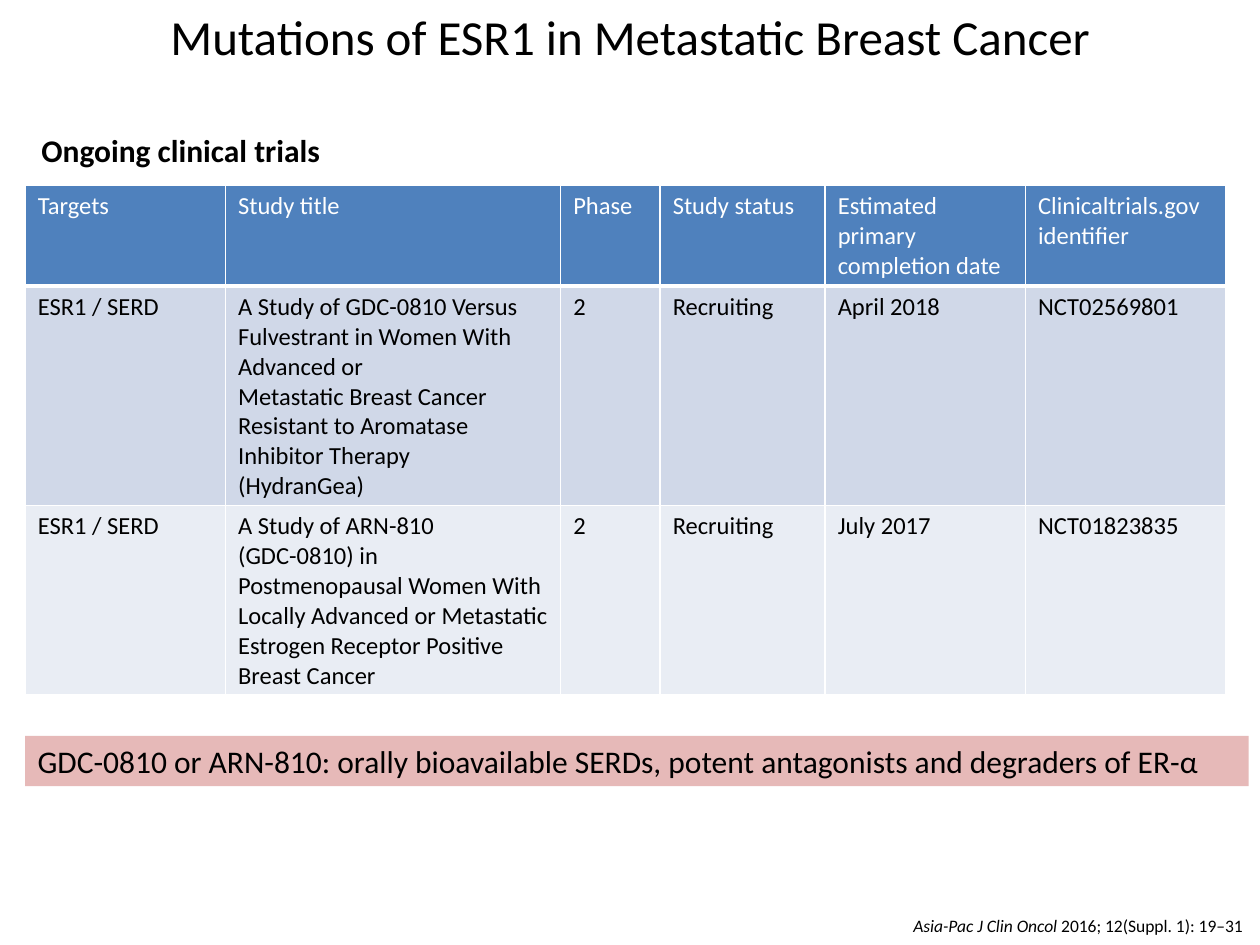
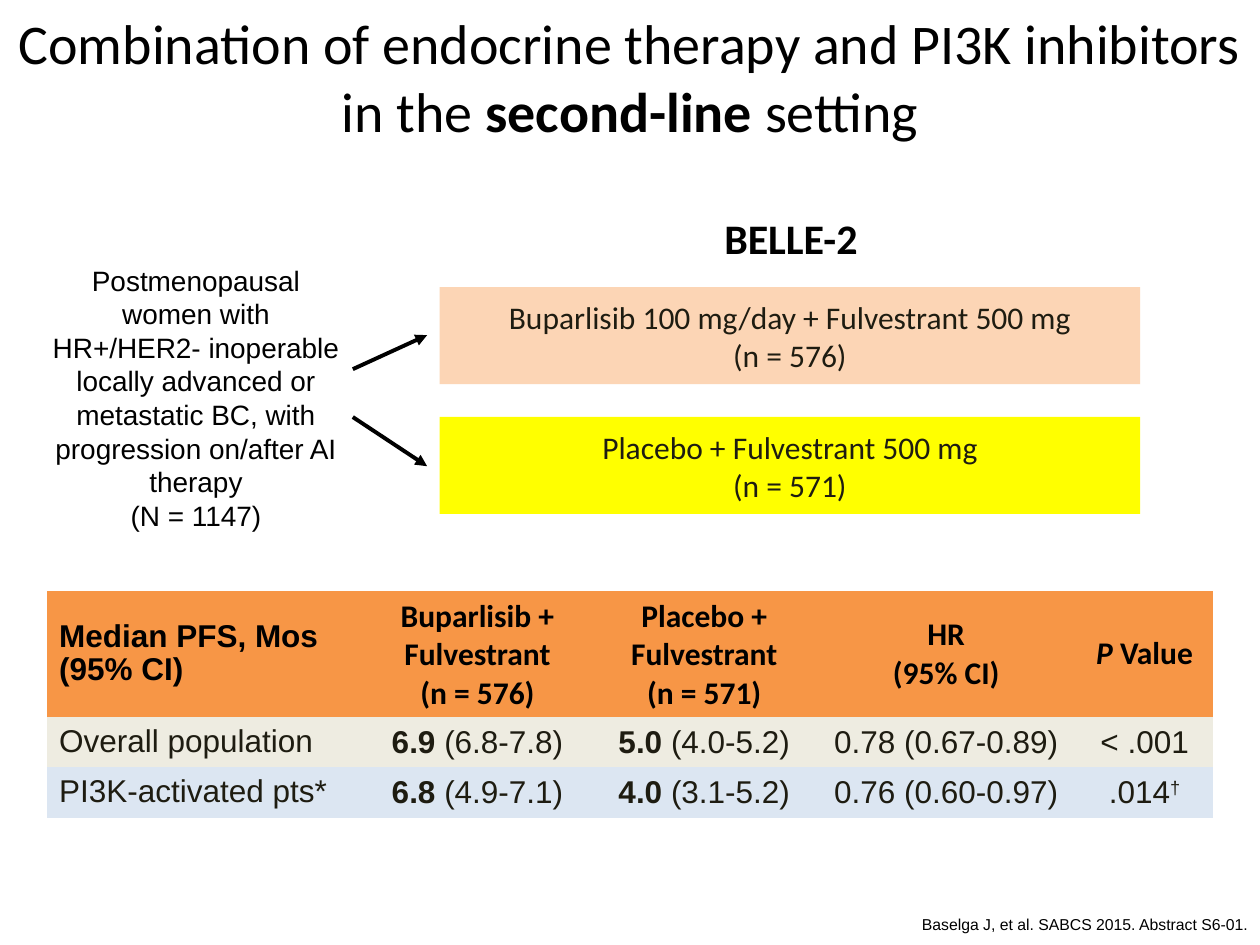
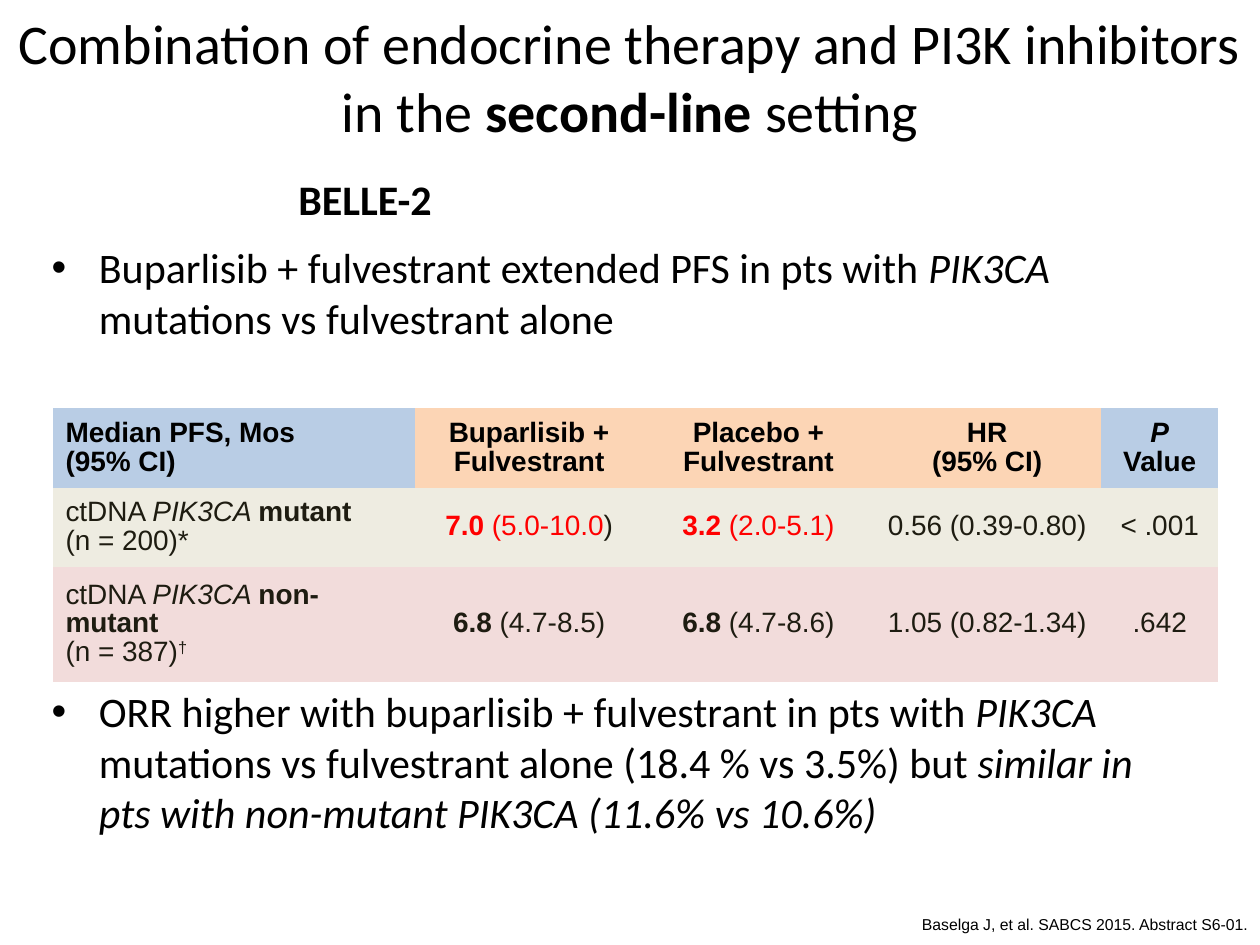
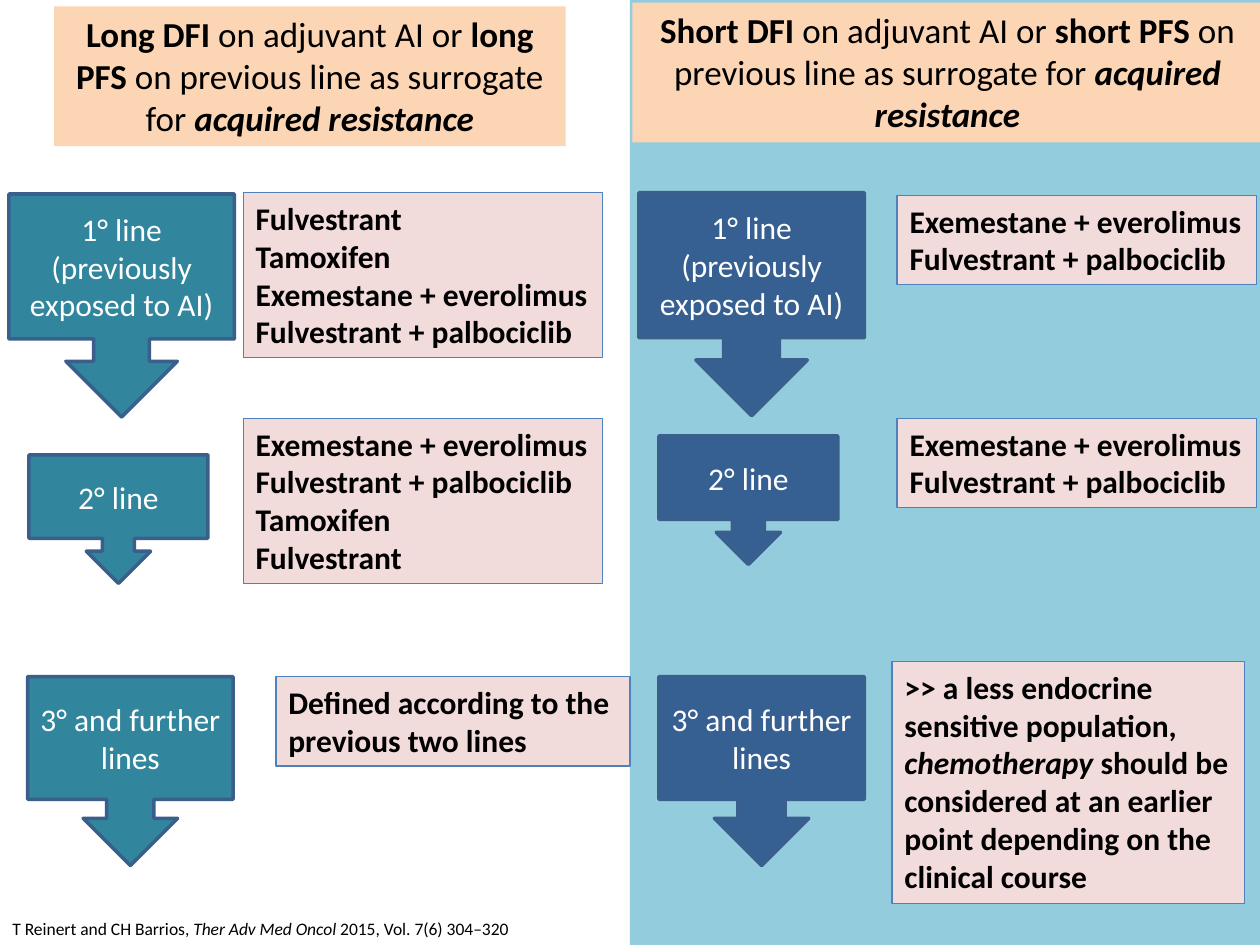
from lxml import etree
from pptx import Presentation
from pptx.dml.color import RGBColor
from pptx.enum.shapes import MSO_CONNECTOR, MSO_SHAPE
from pptx.enum.text import MSO_ANCHOR, MSO_AUTO_SIZE, PP_ALIGN
from pptx.oxml.ns import qn
from pptx.util import Inches, Pt

COLORS = {
    "black": "000000", "white": "FFFFFF", "ink": "1E1C11", "red": "FF0000",
    "blue": "4F81BD", "band": "D0D8E8", "pale band": "E9EDF4",
    "rose": "E6B9B8", "pale rose": "F2DCDB", "peach": "FCD5B5",
    "yellow": "FFFF00", "orange": "F79646", "cream": "EEECE1",
    "ice": "DCE6F2", "sky": "B9CDE5", "aqua": "93CDDD",
    "teal": "31859C", "navy": "376092", "outline": "3A5F8C",
}
NO_STYLE_NO_GRID = "{2D5ABB26-0587-4C30-8999-92F81FD0307C}"
CENTER = PP_ALIGN.CENTER


def write(frame, content, size=18, font="Calibri", color="black", bold=False,
          align=PP_ALIGN.LEFT, spacing=None):
    """Write a string or (text, marks) runs; marks: b bold, i italic, r red, ^ raised."""
    runs = [(content, "")] if isinstance(content, str) else content
    paragraph = frame.paragraphs[0]
    for text, marks in runs:
        for number, line in enumerate(text.split("\n")):
            if number:
                paragraph = frame.add_paragraph()
            if not line:
                continue
            run = paragraph.add_run()
            run.text = line
            formats = {"name": font, "size": Pt(size), "bold": bold or "b" in marks,
                       "italic": "i" in marks}
            for name, value in formats.items():
                setattr(run.font, name, value)
            shade = "red" if "r" in marks else color
            run.font.color.rgb = RGBColor.from_string(COLORS[shade])
            if "^" in marks:
                run.font._element.set("baseline", "30000")
    for paragraph in frame.paragraphs:
        paragraph.alignment = align
        paragraph.line_spacing = spacing


def add_box(slide, at, content="", shape=None, fill=None, line=None, line_width=0.75,
            wrap=True, anchor=MSO_ANCHOR.TOP, **look):
    """Add a filled shape, or a plain text box when no shape is given."""
    place = [Inches(length) for length in at]
    if shape is None:
        box = slide.shapes.add_textbox(*place)
    else:
        box = slide.shapes.add_shape(shape, *place)
        box.shadow.inherit = False
        box.fill.solid()
        box.fill.fore_color.rgb = RGBColor.from_string(COLORS[fill])
        if line:
            box.line.color.rgb = RGBColor.from_string(COLORS[line])
            box.line.width = Pt(line_width)
        else:
            box.line.fill.background()
    box.text_frame.word_wrap = wrap
    box.text_frame.vertical_anchor = anchor
    write(box.text_frame, content, **look)


prs = Presentation()
prs.slide_width, prs.slide_height = Inches(10), Inches(7.5)
title_and_content, title_only, blank = (prs.slide_layouts[i] for i in (1, 5, 6))
mutations, trial_design, trial_results, sequence = (
    prs.slides.add_slide(layout)
    for layout in (title_only, title_only, title_and_content, blank))

# Titles, trial names and references
second_line_title = [
    ("Combination of endocrine therapy and PI3K inhibitors in the ", ""),
    ("second-line ", "b"), ("setting", "")]
for slide, top, height, size, content in (
        (mutations, 0, 0.57, 28, "Mutations of ESR1 in Metastatic Breast Cancer"),
        (trial_design, 0.02, 1.18, 32, second_line_title),
        (trial_results, 0.02, 1.18, 32, second_line_title)):
    title = slide.shapes.title
    title.left, title.top = Inches(0), Inches(top)
    title.width, title.height = Inches(10), Inches(height)
    title.text_frame.auto_size = MSO_AUTO_SIZE.NONE
    title.text_frame.vertical_anchor = MSO_ANCHOR.TOP
    write(title.text_frame, content, size=size, align=CENTER)

for slide, left, top in ((trial_design, 5.65, 1.64), (trial_results, 2.27, 1.33)):
    add_box(slide, (left, top, 1.27, 0.5), "BELLE-2", size=24, bold=True, wrap=False)
    add_box(slide, (3.43, 7.21, 6.57, 0.25), "Baselga J, et al. SABCS 2015. Abstract S6-01.",
            anchor=MSO_ANCHOR.BOTTOM, size=9, font="Arial", align=PP_ALIGN.RIGHT)

# Slide 1: ongoing trials
add_box(mutations, (0.23, 0.99, 2.43, 0.4), "Ongoing clinical trials", bold=True, wrap=False)
add_box(mutations, (0.2, 5.84, 9.71, 0.4),
        "GDC-0810 or ARN-810: orally bioavailable SERDs, potent antagonists and "
        "degraders of ER-α", shape=MSO_SHAPE.RECTANGLE, fill="rose", wrap=False)
add_box(mutations, (7.15, 7.21, 2.85, 0.27),
        [("Asia-Pac J Clin Oncol ", "i"), ("2016; 12(Suppl. 1): 19–31", "")],
        size=10, wrap=False)

# Slide 2: patients and the two arms
add_box(trial_design, (0.3, 2.04, 2.51, 2.26),
        "Postmenopausal women with HR+/HER2- inoperable locally advanced or metastatic BC, "
        "with progression on/after AI therapy\n(N = 1147)",
        size=16, font="Arial", align=CENTER)
for top, fill, arm, start_y, end_y in (
        (2.28, "peach", "Buparlisib 100 mg/day + Fulvestrant 500 mg\n(n = 576)", 2.93, 2.66),
        (3.31, "yellow", "Placebo + Fulvestrant 500 mg\n(n = 571)", 3.31, 3.7)):
    add_box(trial_design, (3.49, top, 5.56, 0.77), arm, shape=MSO_SHAPE.RECTANGLE, fill=fill,
            wrap=False, anchor=MSO_ANCHOR.MIDDLE, color="ink", align=CENTER)
    arrow = trial_design.shapes.add_connector(
        MSO_CONNECTOR.STRAIGHT, Inches(2.8), Inches(start_y), Inches(3.39), Inches(end_y))
    arrow.line.color.rgb = RGBColor.from_string(COLORS["black"])
    arrow.line.width = Pt(2.25)
    etree.SubElement(arrow.line._get_or_add_ln(), qn("a:tailEnd"), type="triangle")
    etree.SubElement(arrow._element.spPr, qn("a:effectLst"))

# Slide 3: findings above and below the table
findings = trial_results.placeholders[1]
findings.left, findings.top = Inches(0.31), Inches(1.87)
findings.width, findings.height = Inches(9.25), Inches(5.09)
findings.text_frame.auto_size = MSO_AUTO_SIZE.NONE
write(findings.text_frame, [
    ("Buparlisib + fulvestrant extended PFS in pts with ", ""), ("PIK3CA", "i"),
    (" mutations vs fulvestrant alone\n", ""),
    ("ORR higher with buparlisib + fulvestrant in pts with ", ""), ("PIK3CA", "i"),
    (" mutations vs fulvestrant alone (18.4 % vs 3.5%) but ", ""),
    ("similar in pts with non-mutant PIK3CA (11.6% vs 10.6%)", "i")], size=24)
findings.text_frame.paragraphs[1].space_before = Pt(196)

# Tables of slides 1 to 3
p_value = [("P", "i"), (" Value", "")]
tables = [
    {"slide": mutations, "at": (0.2, 1.47), "widths": (1.59, 2.66, 0.79, 1.31, 1.59, 1.59),
     "heights": (0.8, 1.74, 1.5), "bordered": True, "anchor": MSO_ANCHOR.TOP,
     "fills": (["blue"] * 6, ["band"] * 6, ["pale band"] * 6),
     "header": {"size": 14, "color": "white"}, "body": {"size": 14},
     "first": {}, "others": {},
     "rows": [
         ["Targets", "Study title", "Phase", "Study status",
          "Estimated primary\ncompletion date", "Clinicaltrials.gov\nidentifier"],
         ["ESR1 / SERD",
          "A Study of GDC-0810 Versus Fulvestrant in Women With Advanced or\n"
          "Metastatic Breast Cancer Resistant to Aromatase Inhibitor Therapy\n(HydranGea)",
          "2", "Recruiting", "April 2018", "NCT02569801"],
         ["ESR1 / SERD",
          "A Study of ARN-810 (GDC-0810) in Postmenopausal Women With\n"
          "Locally Advanced or Metastatic Estrogen Receptor Positive Breast Cancer",
          "2", "Recruiting", "July 2017", "NCT01823835"]]},
    {"slide": trial_design, "at": (0.37, 4.69), "widths": (2.51, 1.82, 1.78, 2.06, 1.09),
     "heights": (1, 0.4, 0.4), "bordered": False, "anchor": MSO_ANCHOR.MIDDLE,
     "fills": (["orange"] * 5, ["cream"] * 5, ["ice"] * 5),
     "header": {"bold": True}, "body": {"font": "Arial", "color": "ink"},
     "first": {"font": "Arial", "spacing": 0.93}, "others": {"align": CENTER},
     "rows": [
         ["Median PFS, Mos\n(95% CI)", "Buparlisib + Fulvestrant\n(n = 576)",
          "Placebo + Fulvestrant\n(n = 571)", "HR\n(95% CI)", p_value],
         ["Overall population", [("6.9", "b"), (" (6.8-7.8)", "")],
          [("5.0", "b"), (" (4.0-5.2)", "")], "0.78 (0.67-0.89)", "< .001"],
         ["PI3K-activated pts*", [("6.8", "b"), (" (4.9-7.1)", "")],
          [("4.0", "b"), (" (3.1-5.2)", "")], "0.76 (0.60-0.97)",
          [(".014", ""), ("†", "^")]]]},
    {"slide": trial_results, "at": (0.42, 3.24), "widths": (2.87, 1.82, 1.82, 1.81, 0.93),
     "heights": (0.63, 0.63, 0.91), "bordered": False, "anchor": MSO_ANCHOR.MIDDLE,
     "fills": (["sky"] + ["peach"] * 3 + ["sky"], ["cream"] * 5, ["pale rose"] * 5),
     "header": {"size": 16, "font": "Arial", "bold": True, "spacing": 0.93},
     "body": {"size": 16, "font": "Arial", "color": "ink", "spacing": 0.93},
     "first": {}, "others": {"align": CENTER},
     "rows": [
         ["Median PFS, Mos\n(95% CI)", "Buparlisib + Fulvestrant", "Placebo + Fulvestrant",
          "HR\n(95% CI)", p_value],
         [[("ctDNA ", ""), ("PIK3CA ", "i"), ("mutant", "b"), ("\n(n = 200)*", "")],
          [("7.0", "br"), (" (5.0-10.0", "r"), (")", "")],
          [("3.2", "br"), (" (2.0-5.1)", "r")], "0.56 (0.39-0.80)", "< .001"],
         [[("ctDNA ", ""), ("PIK3CA ", "i"), ("non-mutant", "b"), ("\n(n = 387)", ""),
           ("†", "^")],
          [("6.8", "b"), (" (4.7-8.5)", "")], [("6.8", "b"), (" (4.7-8.6)", "")],
          "1.05 (0.82-1.34)", ".642"]]},
]
for spec in tables:
    widths, heights = spec["widths"], spec["heights"]
    table = spec["slide"].shapes.add_table(
        len(heights), len(widths), *(Inches(length) for length in spec["at"]),
        Inches(sum(widths)), Inches(sum(heights))).table
    table._tbl.tblPr.find(qn("a:tableStyleId")).text = NO_STYLE_NO_GRID
    for column, width in zip(table.columns, widths):
        column.width = Inches(width)
    for r, (height, contents) in enumerate(zip(heights, spec["rows"])):
        table.rows[r].height = Inches(height)
        for c, content in enumerate(contents):
            cell = table.cell(r, c)
            cell.vertical_anchor = spec["anchor"]
            for side in ("lnL", "lnR", "lnT", "lnB") if spec["bordered"] else ():
                heavy = (r, side) in ((0, "lnB"), (1, "lnT"))
                border = etree.SubElement(cell._tc.get_or_add_tcPr(), qn(f"a:{side}"),
                                          w=str(Pt(3 if heavy else 1)))
                stroke = etree.SubElement(border, qn("a:solidFill"))
                etree.SubElement(stroke, qn("a:srgbClr"), val=COLORS["white"])
            cell.fill.solid()
            cell.fill.fore_color.rgb = RGBColor.from_string(COLORS[spec["fills"][r][c]])
            write(cell.text_frame, content, **{**spec["body" if r else "header"],
                                               **spec["others" if c else "first"]})

# Slide 4: treatment sequence after long and short disease control
add_box(sequence, (5, 0, 5, 7.5), shape=MSO_SHAPE.RECTANGLE, fill="aqua")
for at, duration, interval in (((0.43, 0.05, 4.06, 1.11), "Long DFI ", "long PFS"),
                               ((5.02, 0.02, 5, 1.11), "Short DFI ", "short PFS")):
    add_box(sequence, at,
            [(duration, "b"), ("on adjuvant AI or ", ""), (interval, "b"),
             (" on previous line as surrogate for ", ""), ("acquired resistance", "bi")],
            shape=MSO_SHAPE.RECTANGLE, fill="peach", size=20, align=CENTER)

line_names = ("1° line (previously exposed to AI)", "2° line", "3° and further lines")
for fill, places in (
        ("teal", ((0.07, 1.54, 1.79, 1.77), (0.23, 3.61, 1.42, 1.02), (0.22, 5.37, 1.63, 1.5))),
        ("navy", ((5.07, 1.53, 1.79, 1.77), (5.23, 3.46, 1.42, 1.02), (5.23, 5.37, 1.63, 1.5)))):
    for at, line_name in zip(places, line_names):
        add_box(sequence, at, line_name, shape=MSO_SHAPE.DOWN_ARROW_CALLOUT, fill=fill,
                line="outline", line_width=2, anchor=MSO_ANCHOR.MIDDLE, color="white",
                align=CENTER)

combinations = "Exemestane + everolimus\nFulvestrant + palbociclib"
for at, wrap, options in (
        ((1.93, 1.53, 2.85, 1.31), False, f"Fulvestrant\nTamoxifen\n{combinations}"),
        ((1.93, 3.32, 2.85, 1.31), False, f"{combinations}\nTamoxifen\nFulvestrant"),
        ((2.19, 5.37, 2.81, 0.71), True, "Defined according to the previous two lines"),
        ((7.12, 1.55, 2.85, 0.71), False, combinations),
        ((7.12, 3.32, 2.85, 0.71), False, combinations),
        ((7.08, 5.25, 2.8, 1.92), True,
         [(">> a less endocrine sensitive population,\n", ""), ("chemotherapy ", "i"),
          ("should be considered at an earlier point depending on the clinical course", "")])):
    add_box(sequence, at, options, shape=MSO_SHAPE.RECTANGLE, fill="pale rose", line="blue",
            wrap=wrap, bold=True)
add_box(sequence, (0, 7.24, 7.66, 0.27),
        [("T Reinert and CH Barrios, ", ""), ("Ther Adv Med Oncol ", "i"),
         ("2015, Vol. 7(6) 304–320", "")], size=10)

prs.save("out.pptx")
